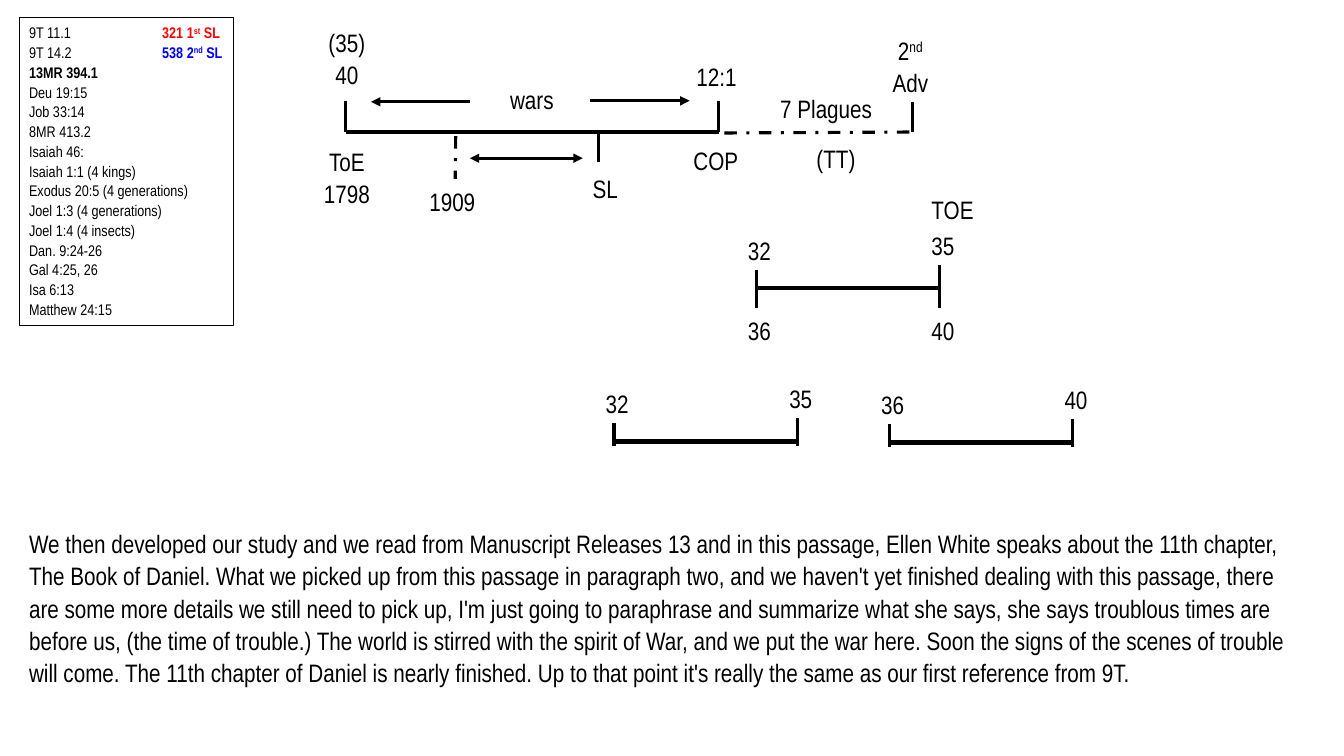
import pptx
import pptx.dml.color
import pptx.enum.dml
import pptx.enum.shapes
import pptx.enum.text
import pptx.util
from lxml import etree

Inches = pptx.util.Inches
Pt = pptx.util.Pt
BLACK = pptx.dml.color.RGBColor(0, 0, 0)
WHITE = pptx.dml.color.RGBColor(255, 255, 255)
RED = pptx.dml.color.RGBColor(255, 0, 0)
BLUE = pptx.dml.color.RGBColor(0, 0, 255)
FONT = "Arial Narrow"
LEFT = pptx.enum.text.PP_ALIGN.LEFT
CENTER = pptx.enum.text.PP_ALIGN.CENTER
DASH_DOT = pptx.enum.dml.MSO_LINE.DASH_DOT
THICK = 3
THIN = 2.25
NAMESPACE = "{http://schemas.openxmlformats.org/drawingml/2006/main}"

REFERENCES = [
    "Deu 19:15", "Job 33:14", "8MR 413.2", "Isaiah 46:", "Isaiah 1:1 (4 kings)",
    "Exodus 20:5 (4 generations)", "Joel 1:3 (4 generations)", "Joel 1:4 (4 insects)",
    "Dan. 9:24-26", "Gal 4:25, 26", "Isa 6:13", "Matthew 24:15",
]
COMMENTARY = (
    "We then developed our study and we read from Manuscript Releases 13 and in this passage, "
    "Ellen White speaks about the 11th chapter, The Book of Daniel. What we picked up from this "
    "passage in paragraph two, and we haven't yet finished dealing with this passage, there are "
    "some more details we still need to pick up, I'm just going to paraphrase and summarize what "
    "she says, she says troublous times are before us, (the time of trouble.) The world is stirred "
    "with the spirit of War, and we put the war here. Soon the signs of the scenes of trouble will "
    "come. The 11th chapter of Daniel is nearly finished. Up to that point it's really the same as "
    "our first reference from 9T."
)


def add_run(paragraph, text, size, color=BLACK, bold=False, raised=False):
    """Append one formatted run."""
    run = paragraph.add_run()
    run.text = text
    run.font.name = FONT
    run.font.size = Pt(size)
    run.font.bold = bold
    run.font.color.rgb = color
    if raised:
        run.font._element.set("baseline", "30000")


def fill_text(shape, paragraphs, size, alignment=LEFT):
    """Write paragraphs, each a list of run tuples, into a shape."""
    frame = shape.text_frame
    frame.word_wrap = True
    frame.auto_size = pptx.enum.text.MSO_AUTO_SIZE.SHAPE_TO_FIT_TEXT
    frame.vertical_anchor = pptx.enum.text.MSO_ANCHOR.TOP
    for index, runs in enumerate(paragraphs):
        paragraph = frame.add_paragraph() if index else frame.paragraphs[0]
        paragraph.alignment = alignment
        paragraph.line_spacing = 1.07
        for text, *style in runs:
            add_run(paragraph, text, size, *style)


def add_box(slide, left, top, width, height, outline):
    """Add a white rectangle with a thin outline."""
    shape = slide.shapes.add_shape(
        pptx.enum.shapes.MSO_SHAPE.RECTANGLE,
        Inches(left), Inches(top), Inches(width), Inches(height))
    shape.shadow.inherit = False
    shape.fill.solid()
    shape.fill.fore_color.rgb = WHITE
    shape.line.color.rgb = outline
    shape.line.width = Pt(0.75)
    return shape


def add_label(slide, left, top, paragraphs, width=0.7, height=0.41, alignment=LEFT):
    """Add a white diagram label."""
    shape = add_box(slide, left, top, width, height, WHITE)
    fill_text(shape, paragraphs, 18, alignment)


def add_line(slide, x1, y1, x2, y2, width=THIN, dash=None, arrows=()):
    """Add a black line with optional dash and arrowheads."""
    line = slide.shapes.add_connector(
        pptx.enum.shapes.MSO_CONNECTOR.STRAIGHT,
        Inches(x1), Inches(y1), Inches(x2), Inches(y2))
    line.line.color.rgb = BLACK
    line.line.width = Pt(width)
    if dash:
        line.line.dash_style = dash
    for end in arrows:
        etree.SubElement(line.line._get_or_add_ln(), NAMESPACE + end, type="triangle")
    etree.SubElement(line._element.spPr, NAMESPACE + "effectLst")


def add_references(slide, left, top, width, height):
    """Add the framed list of references."""
    shape = add_box(slide, left, top, width, height, BLACK)
    headings = [
        [("9T 11.1\t",), ("321 1", RED, True), ("st", RED, True, True), (" SL", RED, True)],
        [("9T 14.2\t",), ("538 2", BLUE, True), ("nd", BLUE, True, True), (" SL", BLUE, True)],
        [("13MR 394.1", BLACK, True)],
    ]
    fill_text(shape, headings + [[(text,)] for text in REFERENCES], 11)
    for paragraph in shape.text_frame.paragraphs[:2]:
        tabs = etree.SubElement(paragraph._p.get_or_add_pPr(), NAMESPACE + "tabLst")
        etree.SubElement(tabs, NAMESPACE + "tab", pos=str(Inches(1.32)), algn="l")


def add_timeline(slide, left, axis):
    """Add the main timeline, starting at left on the height of axis."""
    close, advent = left + 3.7, left + 5.62
    add_line(slide, close, axis, left, axis, THICK)
    for x in (left, close, advent):
        add_line(slide, x, axis - 0.31, x, axis)
    add_line(slide, left + 2.51, axis, left + 2.51, axis + 0.3)
    add_line(slide, left + 1.09, axis + 0.04, left + 1.08, axis + 0.88, dash=DASH_DOT)
    add_line(slide, advent - 0.03, axis, close - 0.04, axis + 0.01, dash=DASH_DOT)
    add_line(slide, left + 1.23, axis - 0.3, left + 0.25, axis - 0.3, arrows=["tailEnd"])
    add_line(slide, left + 2.42, axis - 0.31, left + 3.41, axis - 0.31, arrows=["tailEnd"])
    add_line(slide, left + 1.23, axis + 0.26, left + 2.35, axis + 0.26,
             arrows=["headEnd", "tailEnd"])

    for dy, texts in ((-1.11, ("(35)", "40")), (0.07, ("ToE", "1798"))):
        add_label(slide, left - 0.34, axis + dy, [[(text,)] for text in texts],
                  height=0.73, alignment=CENTER)
    add_label(slide, left + 5.25, axis - 1.03, [[("2",), ("nd", BLACK, False, True), (" Adv",)]],
              height=0.73, alignment=CENTER)
    add_label(slide, left + 1.34, axis - 0.54, [[("wars",)]], 1.01, alignment=CENTER)
    for dx, dy, width, text in (
            (2.35, 0.34, 0.51, "SL"), (3.38, -0.77, 0.7, "12:1"),
            (4.21, -0.45, 1.13, "7 Plagues"), (0.73, 0.47, 0.7, "1909"),
            (3.35, 0.06, 0.86, "COP"), (4.57, 0.04, 0.7, "(TT)")):
        add_label(slide, left + dx, axis + dy, [[(text,)]], width)


def add_span(slide, left, axis, above, below=None, title=None):
    """Add a bar with end ticks, numbered above and optionally below."""
    right = left + 1.82
    add_line(slide, right, axis, left, axis, THICK)
    for x in (left, right):
        add_line(slide, x, axis - 0.29, x, axis + (0.35 if below else 0.04))
    for x, dy, text in zip((left, right), (-0.6, -0.65), above):
        add_label(slide, x - 0.18, axis + dy, [[(text,)]])
    for x, text in zip((left, right), below or ()):
        add_label(slide, x - 0.18, axis + 0.2, [[(text,)]])
    if title:
        add_label(slide, right - 0.18, axis - 1, [[(title,)]])


def add_commentary(slide, left, top, width, height):
    """Add the explanatory paragraph."""
    shape = slide.shapes.add_textbox(Inches(left), Inches(top), Inches(width), Inches(height))
    fill_text(shape, [[(COMMENTARY,)]], 18)


def main():
    """Build and save the slide."""
    presentation = pptx.Presentation()
    presentation.slide_width = Inches(13.33)
    presentation.slide_height = Inches(7.5)
    slide = presentation.slides.add_slide(presentation.slide_layouts[6])
    add_references(slide, 0.19, 0.17, 2.13, 3.06)
    add_timeline(slide, 3.43, 1.31)
    add_commentary(slide, 0.19, 5.17, 12.85, 1.7)
    add_span(slide, 7.5, 2.86, ("32", "35"), ("36", "40"), "TOE")
    add_span(slide, 6.09, 4.38, ("32", "35"))
    add_span(slide, 8.82, 4.39, ("36", "40"))
    presentation.save("out.pptx")


if __name__ == "__main__":
    main()
